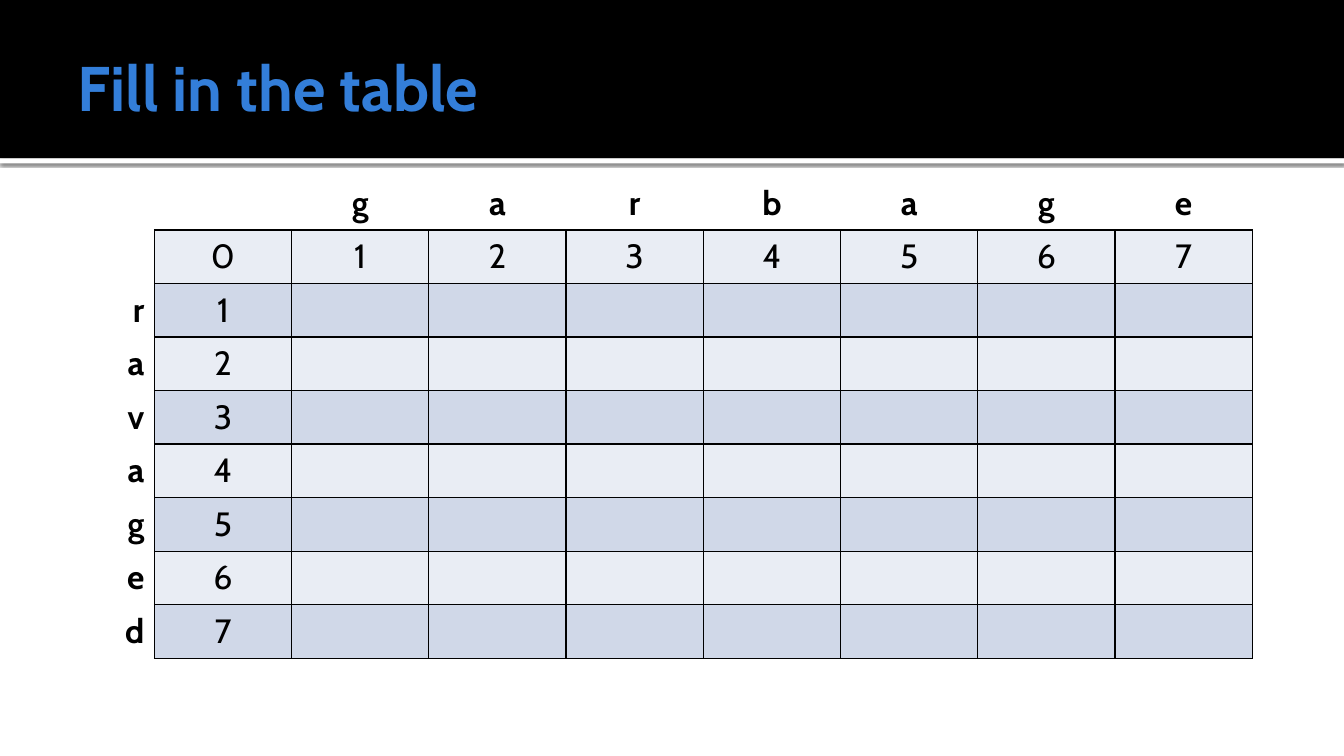
from dataclasses import dataclass

from lxml import etree
from pptx import Presentation
from pptx import util as u
from pptx.dml.color import RGBColor
from pptx.enum import shapes, text
from pptx.oxml import ns


@dataclass(frozen=True)
class Theme:
    """Colours, font and type sizes of the slide."""
    font: str = "Cabin"
    title_size: int = 45
    cell_size: int = 24
    black: str = "000000"
    white: str = "FFFFFF"
    blue: str = "337ED9"
    bands: tuple = ("D0D8E8", "E9EDF4")


THEME = Theme()
COLUMN_WORD = "garbage"
ROW_WORD = "ravaged"


def format_text(paragraph, size, color, bold, alignment):
    """Align a paragraph and format its runs."""
    paragraph.alignment = alignment
    for run in paragraph.runs:
        run.font.name = THEME.font
        run.font.size = u.Pt(size)
        run.font.bold = bold
        run.font.color.rgb = RGBColor.from_string(color)


def add_bar(slide, left, top, width, height, color):
    """Add a plain filled rectangle."""
    bar = slide.shapes.add_shape(shapes.MSO_SHAPE.RECTANGLE, left, top, width, height)
    bar.fill.solid()
    bar.fill.fore_color.rgb = RGBColor.from_string(color)
    bar.line.fill.background()
    bar.shadow.inherit = False
    return bar


def add_shadow(shape):
    """Give a shape a soft shadow that falls straight down."""
    effects = shape.element.spPr.find(ns.qn("a:effectLst"))
    shadow = etree.SubElement(
        effects, ns.qn("a:outerShdw"), blurRad=str(u.Pt(2.5)), dist=str(u.Pt(0.8)),
        dir="5400000", algn="t", rotWithShape="0")
    color = etree.SubElement(shadow, ns.qn("a:srgbClr"), val=THEME.black)
    etree.SubElement(color, ns.qn("a:alpha"), val="60000")


def add_header(slide, left, top, width, height):
    """Draw the title band with its white rule and place the title in it."""
    rule = add_bar(slide, left, top + height, width, u.Inches(0.05), THEME.white)
    add_shadow(rule)
    add_bar(slide, left, top, width, height, THEME.black)

    title = slide.shapes.title
    title.left, title.top = left + u.Inches(0.67), top + u.Inches(0.17)
    title.width, title.height = u.Inches(12), u.Inches(1.37)
    frame = title.text_frame
    frame.text = "Fill in the table"
    frame.word_wrap = True
    frame.auto_size = text.MSO_AUTO_SIZE.NONE
    frame.vertical_anchor = text.MSO_ANCHOR.MIDDLE
    frame.margin_left = u.Inches(0.1)
    frame.margin_right = frame.margin_top = frame.margin_bottom = u.Inches(0.05)
    format_text(frame.paragraphs[0], THEME.title_size, THEME.blue, True, text.PP_ALIGN.LEFT)
    title.element.getparent().append(title.element)


def set_borders(cell, black_sides):
    """Draw the named sides of a cell in black and the others in white."""
    properties = cell._tc.get_or_add_tcPr()
    for side in "LRTB":
        line = etree.SubElement(properties, ns.qn(f"a:ln{side}"), w=str(u.Pt(1)))
        fill = etree.SubElement(line, ns.qn("a:solidFill"))
        color = THEME.black if side in black_sides else THEME.white
        etree.SubElement(fill, ns.qn("a:srgbClr"), val=color)


def cell_label(row, column):
    """Return the letter or starting distance shown in a cell."""
    if row == 0:
        return COLUMN_WORD[column - 2] if column > 1 else ""
    if column == 0:
        return ROW_WORD[row - 2] if row > 1 else ""
    return str(row + column - 2) if 1 in (row, column) else ""


def format_cell(cell, row, column):
    """Fill, border and label one cell of the distance table."""
    inside = row > 0 and column > 0
    if inside:
        black_sides = "LRTB"
    elif column > 0:
        black_sides = "B"
    else:
        black_sides = "R" if row > 0 else ""
    set_borders(cell, black_sides)
    if inside:
        cell.fill.solid()
        cell.fill.fore_color.rgb = RGBColor.from_string(THEME.bands[row % 2])
    else:
        cell.fill.background()
    cell.vertical_anchor = text.MSO_ANCHOR.MIDDLE
    label = cell_label(row, column)
    if label:
        cell.text_frame.text = label
        alignment = text.PP_ALIGN.CENTER if column > 0 else text.PP_ALIGN.RIGHT
        format_text(cell.text_frame.paragraphs[0], THEME.cell_size, THEME.black,
                    not inside, alignment)


def add_distance_table(slide, left, top, width, height):
    """Add the edit-distance table for the two words."""
    row_count, column_count = len(ROW_WORD) + 2, len(COLUMN_WORD) + 2
    frame = slide.shapes.add_table(row_count, column_count, left, top, width, height)
    table = frame.table
    table.first_row = table.horz_banding = False
    for row in range(row_count):
        for column in range(column_count):
            format_cell(table.cell(row, column), row, column)


def main():
    """Build the slide and save it."""
    presentation = Presentation()
    presentation.slide_width = u.Inches(13.33)
    presentation.slide_height = u.Inches(7.5)
    slide = presentation.slides.add_slide(presentation.slide_layouts[5])
    add_header(slide, 0, 0, presentation.slide_width, u.Inches(1.57))
    add_distance_table(slide, u.Inches(0.17), u.Inches(1.75), u.Inches(12.25), u.Inches(4.78))
    presentation.save("out.pptx")


if __name__ == "__main__":
    main()
